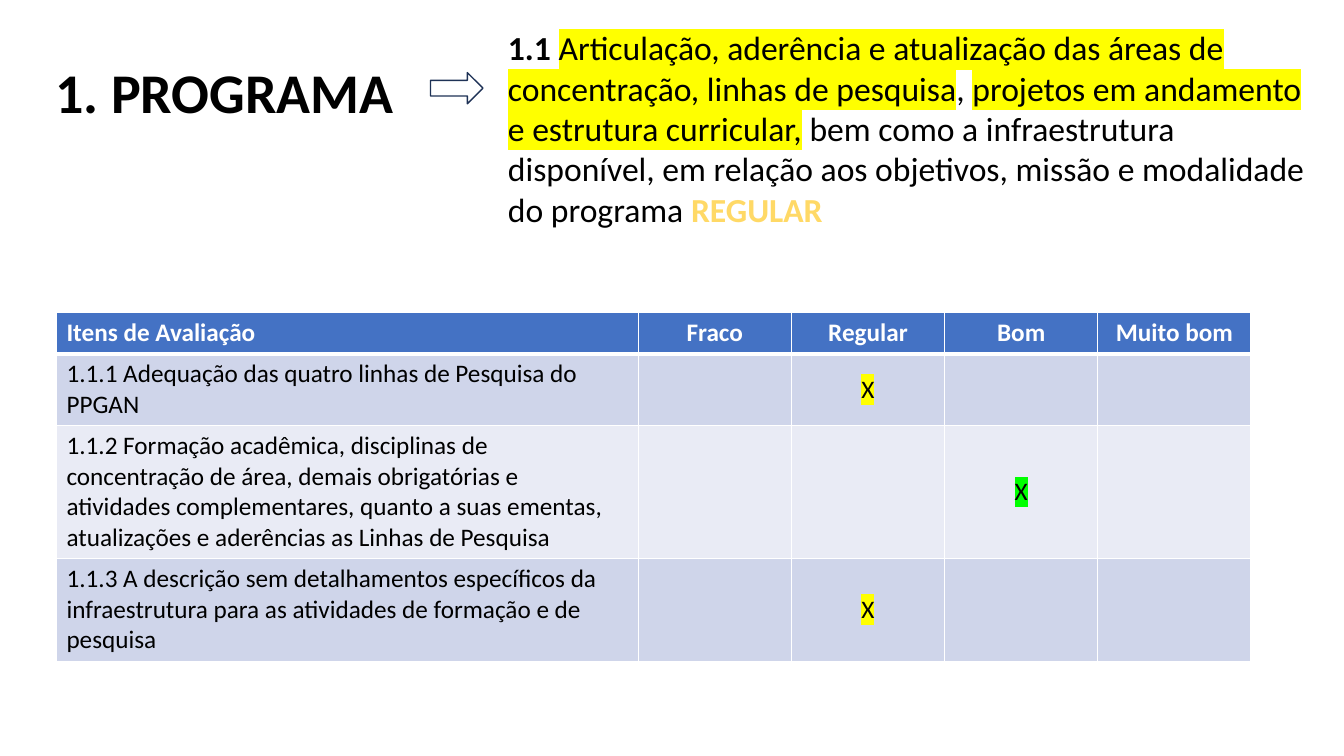
from dataclasses import dataclass

import pptx
import pptx.dml.color
import pptx.enum.shapes
import pptx.enum.text
import pptx.oxml.ns
import pptx.util
from lxml import etree
from pptx.util import Inches

ALIGN = pptx.enum.text.PP_ALIGN
ANCHOR = pptx.enum.text.MSO_ANCHOR


@dataclass(frozen=True)
class Theme:
    font: str = "Calibri"
    title: int = 40
    body: int = 24
    cell: int = 18
    black: str = "000000"
    white: str = "FFFFFF"
    header: str = "4472C4"
    bands: tuple = ("CFD5EA", "E9EBF5")
    yellow: str = "FFFF00"
    green: str = "00FF00"
    gold: str = "FFD966"
    outline: str = "1E3256"


T = Theme()
RATINGS = ["Fraco", "Regular", "Bom", "Muito bom"]
# Item, rating, highlight of the mark, row height
ITEMS = [
    ("1.1.1 Adequação das quatro linhas de Pesquisa do PPGAN",
     "Regular", T.yellow, 0.71),
    ("1.1.2 Formação acadêmica, disciplinas de concentração de área, demais "
     "obrigatórias e atividades complementares, quanto a suas ementas, "
     "atualizações e aderências as Linhas de Pesquisa",
     "Bom", T.green, 1.32),
    ("1.1.3 A descrição sem detalhamentos específicos da infraestrutura para "
     "as atividades de formação e de pesquisa",
     "Regular", T.yellow, 1.02),
]
CRITERION = [
    ("1.1 ", {"bold": True}),
    ("Articulação, aderência e atualização das áreas de concentração, "
     "linhas de pesquisa", {"highlight": T.yellow}),
    (", ", {}),
    ("projetos em andamento e estrutura curricular,", {"highlight": T.yellow}),
    (" bem como a infraestrutura disponível, em relação aos objetivos, "
     "missão e modalidade do programa ", {}),
    ("REGULAR", {"bold": True, "color": T.gold}),
]


def rgb(color):
    return pptx.dml.color.RGBColor.from_string(color)


def sub(parent, tag, **attrs):
    return etree.SubElement(parent, pptx.oxml.ns.qn(tag), **attrs)


def add_run(p, text, size, color=T.black, bold=False, highlight=None):
    r = p.add_run()
    r.text = text
    r.font.color.rgb = rgb(color)
    formats = {"name": T.font, "size": pptx.util.Pt(size), "bold": bold}
    for name, value in formats.items():
        setattr(r.font, name, value)
    if highlight:
        rPr = r.font._element
        mark = sub(rPr, "a:highlight")
        sub(mark, "a:srgbClr", val=highlight)
        rPr.find(pptx.oxml.ns.qn("a:solidFill")).addnext(mark)


def add_text(s, box, runs, size, anchor=ANCHOR.TOP, spacing=1.0):
    tf = s.shapes.add_textbox(*map(Inches, box)).text_frame
    formats = {"word_wrap": True, "vertical_anchor": anchor}
    for name, value in formats.items():
        setattr(tf, name, value)
    p = tf.paragraphs[0]
    p.line_spacing = spacing
    for text, style in runs:
        add_run(p, text, size, **style)


def add_arrow(s, box):
    sp = s.shapes.add_shape(pptx.enum.shapes.MSO_SHAPE.RIGHT_ARROW,
                            *map(Inches, box))
    sp.shadow.inherit = False
    sp.fill.background()
    sp.line.color.rgb = rgb(T.outline)
    sp.line.width = pptx.util.Pt(1)


def set_borders(cell, bottom):
    """Draw white cell borders; only the bottom width (points) varies."""
    tcPr = cell._tc.get_or_add_tcPr()
    widths = {"L": 1, "R": 1, "T": 1, "B": bottom}
    for i, (side, width) in enumerate(widths.items()):
        ln = sub(tcPr, f"a:ln{side}", w=str(pptx.util.Pt(width)))
        sub(sub(ln, "a:solidFill"), "a:srgbClr", val=T.white)
        tcPr.insert(i, ln)


def fill_cell(cell, text, fill, centred, bottom=1, **style):
    cell.fill.solid()
    cell.fill.fore_color.rgb = rgb(fill)
    set_borders(cell, bottom)
    p = cell.text_frame.paragraphs[0]
    p.font.size = pptx.util.Pt(T.cell)
    if centred:
        cell.vertical_anchor = ANCHOR.MIDDLE
        p.alignment = ALIGN.CENTER
    if text:
        add_run(p, text, T.cell, **style)


def add_ratings_table(s, left, top):
    widths = [5.77] + [1.52] * len(RATINGS)
    heights = [0.41] + [item[-1] for item in ITEMS]
    table = s.shapes.add_table(
        len(heights), len(widths), Inches(left), Inches(top),
        Inches(sum(widths)), Inches(sum(heights))).table
    for column, width in zip(table.columns, widths):
        column.width = Inches(width)
    for row, height in zip(table.rows, heights):
        row.height = Inches(height)

    for c, text in enumerate(["Itens de Avaliação"] + RATINGS):
        fill_cell(table.cell(0, c), text, T.header, c > 0, bottom=3,
                  color=T.white, bold=True)
    for i, (item, rating, mark, _) in enumerate(ITEMS):
        band = T.bands[i % 2]
        fill_cell(table.cell(i + 1, 0), item, band, False)
        for c, name in enumerate(RATINGS, 1):
            text = "X" if name == rating else ""
            fill_cell(table.cell(i + 1, c), text, band, True, highlight=mark)


def main():
    prs = pptx.Presentation()
    prs.slide_width, prs.slide_height = Inches(13.33), Inches(7.5)
    s = prs.slides.add_slide(prs.slide_layouts[6])
    add_text(s, (0.45, 0.22, 11.5, 1.45), [("1. PROGRAMA", {"bold": True})],
             T.title, ANCHOR.MIDDLE, 0.9)
    add_ratings_table(s, 0.56, 3.1)
    add_text(s, (4.94, 0.22, 8.17, 2.12), CRITERION, T.body)
    add_arrow(s, (4.27, 0.72, 0.52, 0.31))
    prs.save("out.pptx")


if __name__ == "__main__":
    main()
